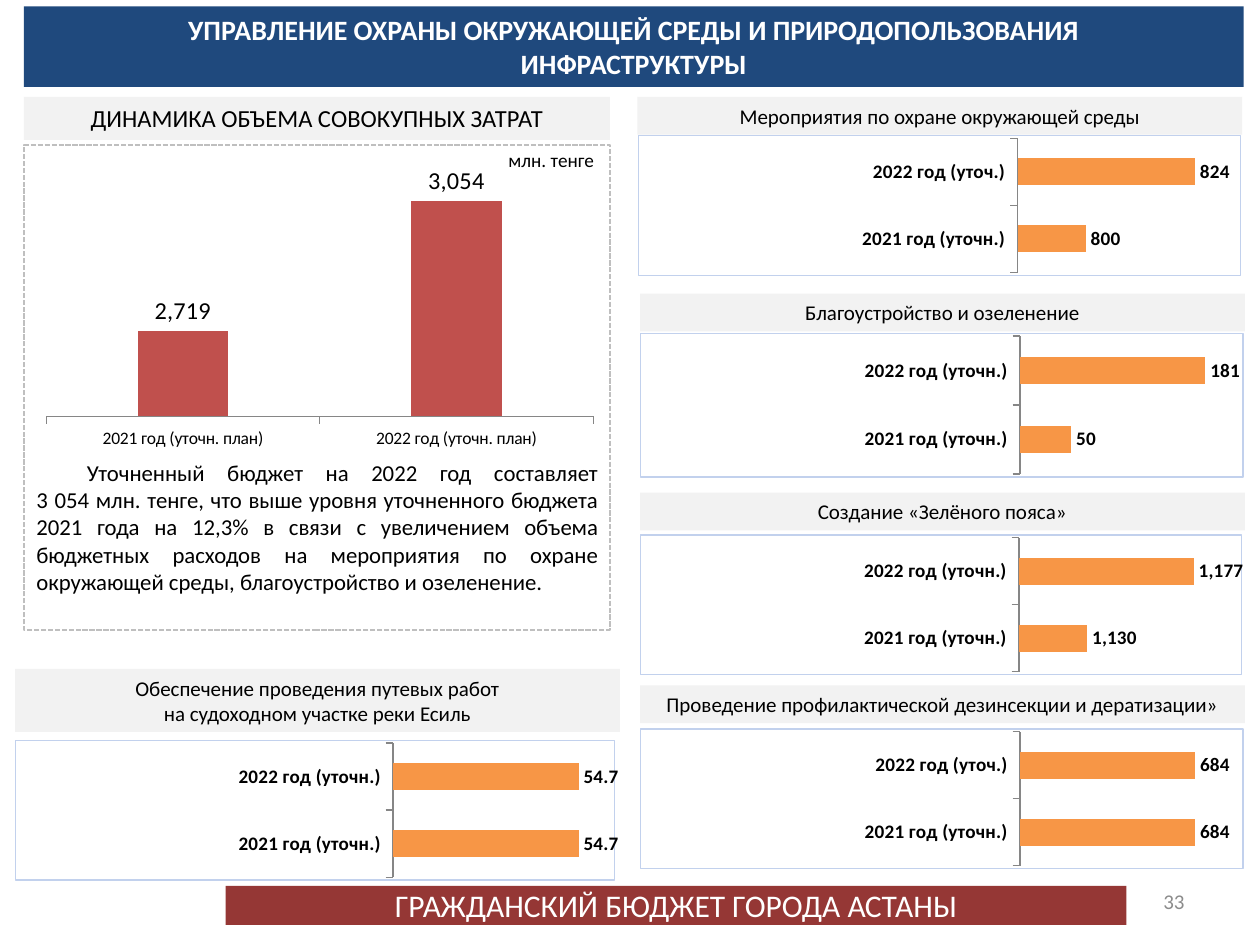
from lxml import etree
from pptx import Presentation
from pptx.chart.data import CategoryChartData
from pptx.dml.color import RGBColor
from pptx.enum.chart import XL_CHART_TYPE, XL_LABEL_POSITION, XL_TICK_MARK
from pptx.enum.dml import MSO_LINE
from pptx.enum.shapes import MSO_SHAPE
from pptx.enum.text import MSO_ANCHOR, MSO_AUTO_SIZE, PP_ALIGN
from pptx.oxml import parse_xml
from pptx.oxml.ns import nsdecls, qn
from pptx.util import Inches, Pt

COLUMN = XL_CHART_TYPE.COLUMN_CLUSTERED
BAR = XL_CHART_TYPE.BAR_CLUSTERED
OUTSIDE_END = XL_LABEL_POSITION.OUTSIDE_END
TICK_OUT, TICK_NONE = XL_TICK_MARK.OUTSIDE, XL_TICK_MARK.NONE
SYS_DASH = MSO_LINE.SQUARE_DOT
RECTANGLE = MSO_SHAPE.RECTANGLE
TOP, MIDDLE = MSO_ANCHOR.TOP, MSO_ANCHOR.MIDDLE
GROW, FIXED = MSO_AUTO_SIZE.SHAPE_TO_FIT_TEXT, MSO_AUTO_SIZE.NONE
CENTER, RIGHT, JUSTIFY = PP_ALIGN.CENTER, PP_ALIGN.RIGHT, PP_ALIGN.JUSTIFY

FONT = "Calibri"
BLACK, WHITE, NAVY, MAROON = "000000", "FFFFFF", "1F497D", "953735"
PANEL, DASH, AXIS, NUMBER = "F2F2F2", "BFBFBF", "868686", "8C8C8C"
RED, ORANGE, FRAME = "C0504D", "F79646", "C2D1ED"
BAR_PLOT = (0.63, 0.02, 0.34, 0.96)
COLUMN_PLOT = (0.03, 0.14, 0.95, 0.67)

PROGRAMMES = [
    ("Мероприятия по охране окружающей среды", (5.06, 0.77), 0.3, (1.07, 1.12),
     "уточ.", (800, 824), (785, 830), "0"),
    ("Благоустройство и озеленение", (5.08, 2.33), 0.3, (2.64, 1.15),
     "уточн.", (50, 181), (0, 200), "0"),
    ("Создание «Зелёного пояса»", (5.08, 3.91), 0.3, (4.24, 1.12),
     "уточн.", (1130, 1177), (1100, 1190), "#,##0"),
    ("Проведение профилактической дезинсекции и дератизации»", (5.08, 5.44), 0.3, (5.78, 1.12),
     "уточ.", (684, 684), (0, 800), "0"),
    ("Обеспечение проведения путевых работ\nна судоходном участке реки Есиль", (0.12, 5.31), 0.5,
     (5.87, 1.12), "уточн.", (54.7, 54.7), (0, 60), "0.0"),
]


def rgb(value):
    """Turn a hex string into a colour."""
    return RGBColor.from_string(value)


class BudgetSlide:
    """Hold the style and the current slide, and draw each kind of element."""

    def __init__(self, slide):
        self.slide = slide

    def style(self, font, size, color=BLACK, bold=False):
        font.name, font.size, font.bold = FONT, Pt(size), bold
        font.color.rgb = rgb(color)

    def set_text(self, shape, lines, size, color=BLACK, bold=False, align=CENTER,
                 anchor=TOP, fit=GROW, indent=0):
        frame = shape.text_frame
        frame.text = lines
        frame.word_wrap = True
        frame.auto_size = fit
        frame.vertical_anchor = anchor
        for paragraph in frame.paragraphs:
            paragraph.alignment = align
            if indent:
                paragraph._p.get_or_add_pPr().set("indent", str(Inches(indent)))
            for run in paragraph.runs:
                self.style(run.font, size, color, bold)

    def box(self, at, fill=None, dash=None):
        shape = self.slide.shapes.add_shape(RECTANGLE, *map(Inches, at))
        shape.shadow.inherit = False
        if fill:
            shape.fill.solid()
            shape.fill.fore_color.rgb = rgb(fill)
        else:
            shape.fill.background()
        if dash:
            shape.line.color.rgb = rgb(dash)
            shape.line.width = Pt(1)
            shape.line.dash_style = SYS_DASH
        else:
            shape.line.fill.background()
        return shape

    def banner(self, at, fill, lines, size, **text):
        self.set_text(self.box(at, fill), lines, size, **text)

    def label(self, at, lines, size, **text):
        self.set_text(self.slide.shapes.add_textbox(*map(Inches, at)), lines, size, **text)

    def chart(self, kind, at, years, amounts, scale, number_format, color, plot_area,
              label_size, year_size, gap=150, bold=False, frame=None):
        data = CategoryChartData(number_format=number_format)
        data.categories = years
        data.add_series("Series 1", amounts)
        chart = self.slide.shapes.add_chart(kind, *map(Inches, at), data).chart
        chart.has_legend = chart.has_title = False
        self.style(chart.font, 18)

        plot = chart.plots[0]
        plot.gap_width, plot.vary_by_categories = gap, False
        bars = plot.series[0].format.fill
        bars.solid()
        bars.fore_color.rgb = rgb(color)
        plot.has_data_labels = True
        labels = plot.data_labels
        labels.show_value, labels.position = True, OUTSIDE_END
        labels.number_format, labels.number_format_is_linked = number_format, False
        self.style(labels.font, label_size, bold=bold)

        year_axis, amount_axis = chart.category_axis, chart.value_axis
        year_axis.has_major_gridlines = amount_axis.has_major_gridlines = False
        year_axis.major_tick_mark, year_axis.minor_tick_mark = TICK_OUT, TICK_NONE
        year_axis.format.line.color.rgb = rgb(AXIS)
        self.style(year_axis.tick_labels.font, year_size, bold=bold)
        amount_axis.minimum_scale, amount_axis.maximum_scale = scale
        amount_axis.visible = False
        self.place_plot(chart, plot_area)
        if frame:
            self.frame_chart(chart, frame)

    def place_plot(self, chart, plot_area):
        area = chart.element.find(qn("c:chart")).find(qn("c:plotArea"))
        for old in area.findall(qn("c:layout")):
            area.remove(old)
        layout = etree.Element(qn("c:layout"))
        manual = etree.SubElement(layout, qn("c:manualLayout"))
        settings = [("layoutTarget", "inner"), ("xMode", "edge"), ("yMode", "edge")]
        for tag, value in settings + list(zip("xywh", plot_area)):
            etree.SubElement(manual, qn(f"c:{tag}")).set("val", str(value))
        area.insert(0, layout)

    def frame_chart(self, chart, color):
        chart.element.find(qn("c:chart")).addnext(parse_xml(
            f'<c:spPr {nsdecls("c", "a")}><a:noFill/><a:ln w="{Pt(0.75)}"><a:solidFill>'
            f'<a:srgbClr val="{color}"/></a:solidFill></a:ln></c:spPr>'))


def main():
    """Build the budget slide and save it."""
    deck = Presentation()
    deck.slide_width, deck.slide_height = Inches(10), Inches(7.5)
    page = BudgetSlide(deck.slides.add_slide(deck.slide_layouts[6]))

    page.banner((0.19, 0.05, 9.68, 0.64), NAVY,
                "УПРАВЛЕНИЕ ОХРАНЫ ОКРУЖАЮЩЕЙ СРЕДЫ И ПРИРОДОПОЛЬЗОВАНИЯ\nИНФРАСТРУКТУРЫ",
                16, color=WHITE, bold=True)
    page.chart(COLUMN, (0.23, 1.07, 4.57, 2.76),
               ["2021 год (уточн. план)", "2022 год (уточн. план)"], (2719, 3054),
               (2500, 3100), "#,##0", RED, COLUMN_PLOT, 13.9, 10, gap=202)
    page.banner((0.19, 0.77, 4.65, 0.34), PANEL, "ДИНАМИКА ОБЪЕМА СОВОКУПНЫХ ЗАТРАТ", 14)
    page.box((0.19, 1.15, 4.65, 3.85), dash=DASH)
    page.label((3.9, 1.13, 0.95, 0.28), "млн. тенге", 11)
    page.label((0.19, 3.59, 4.65, 1.19),
               "Уточненный бюджет на 2022 год составляет\v3 054 млн. тенге, что выше уровня "
               "уточненного бюджета 2021 года на 12,3% в связи с увеличением объема бюджетных "
               "расходов на мероприятия по охране окружающей среды, благоустройство и озеленение.",
               13, align=JUSTIFY, indent=0.4)

    for title, (left, top), height, (chart_top, chart_height), status, amounts, scale, fmt in PROGRAMMES:
        page.chart(BAR, (left, chart_top, 4.79, chart_height),
                   ["2021 год (уточн.)", f"2022 год ({status})"], amounts, scale, fmt,
                   ORANGE, BAR_PLOT, 11, 11, bold=True, frame=FRAME)
        page.banner((left, top, 4.8, height), PANEL, title, 12)

    page.banner((1.79, 7.03, 7.15, 0.31), MAROON, "ГРАЖДАНСКИЙ БЮДЖЕТ ГОРОДА АСТАНЫ", 18,
                color=WHITE, anchor=MIDDLE, fit=FIXED)
    page.label((7.17, 6.95, 2.33, 0.4), "33", 12, color=NUMBER, align=RIGHT,
               anchor=MIDDLE, fit=FIXED)
    deck.save("out.pptx")


if __name__ == "__main__":
    main()
